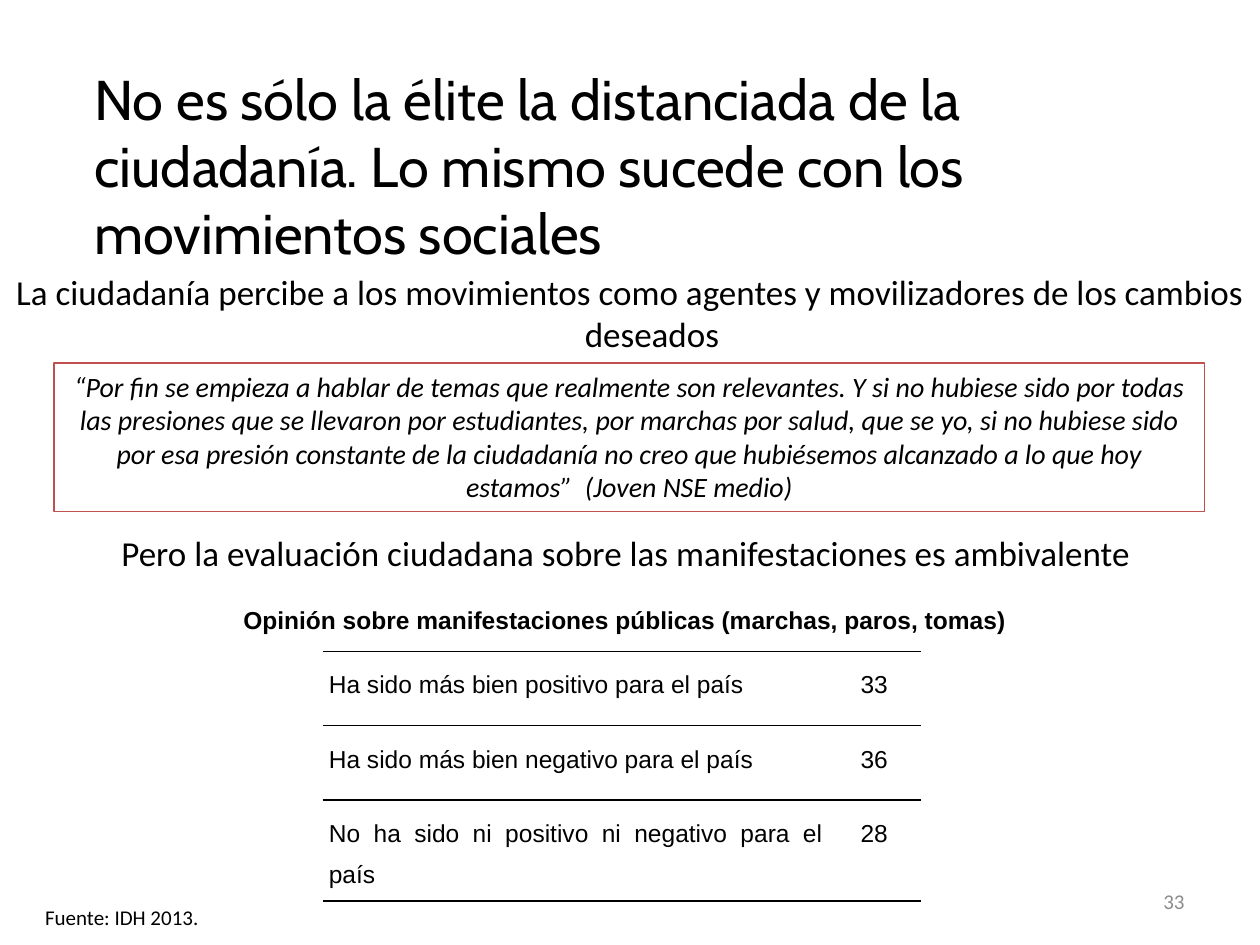
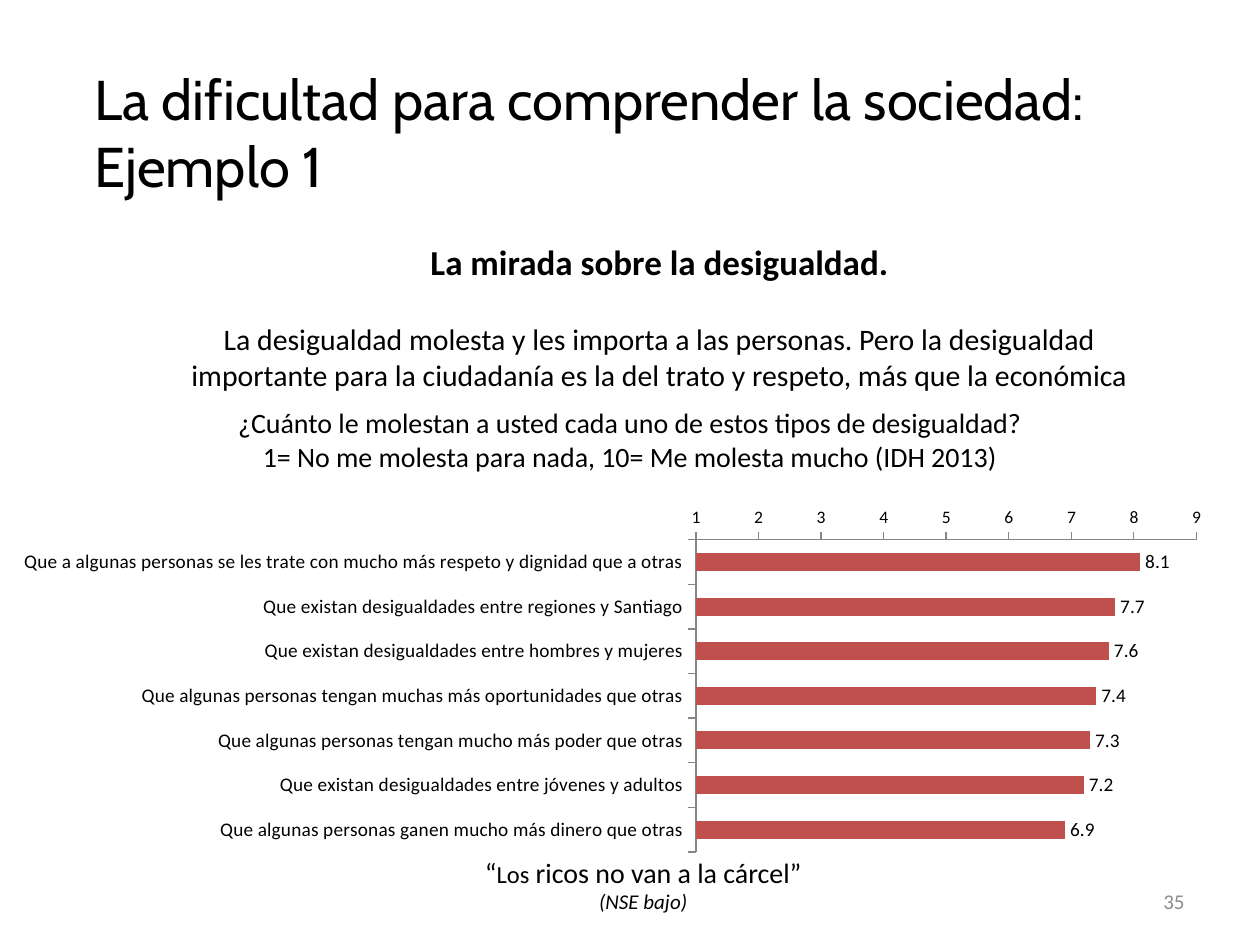
from lxml.etree import SubElement
from pptx import Presentation
from pptx.chart.data import CategoryChartData
from pptx.dml.color import RGBColor
from pptx.enum.chart import XL_CHART_TYPE as Kind, XL_LABEL_POSITION as Spot
from pptx.enum.chart import XL_TICK_MARK as Tick
from pptx.enum.shapes import MSO_SHAPE as Form
from pptx.enum.text import MSO_ANCHOR as Anchor, PP_ALIGN as Align
from pptx.oxml import parse_xml
from pptx.oxml.ns import nsdecls, qn
from pptx.util import Inches, Pt

# Shared look
HUES = {"ink": "000000", "red": "C0504D", "gray": "8C8C8C", "axis": "868686"}
BODY, HEAD, SANS = "Calibri", "Cabin", "Arial"

# Content: slide 1
TITLE_1 = ("No es sólo la élite la distanciada de la ciudadanía. "
           "Lo mismo sucede con los movimientos sociales")
CLAIMS = [
    "La ciudadanía percibe a los movimientos como agentes y movilizadores "
    "de los cambios deseados",
    "Pero la evaluación ciudadana sobre las manifestaciones es ambivalente ",
]
QUOTE = ("“Por fin se empieza a hablar de temas que realmente son relevantes. "
         "Y si no hubiese sido por todas las presiones que se llevaron por "
         "estudiantes, por marchas por salud, que se yo, si no hubiese sido por "
         "esa presión constante de la ciudadanía no creo que hubiésemos "
         "alcanzado a lo que hoy estamos”  (Joven NSE medio)")
CAPTION = "Opinión sobre manifestaciones públicas (marchas, paros, tomas)"
VIEWS = [
    ("Ha sido más bien positivo para el país", "33"),
    ("Ha sido más bien negativo para el país", "36"),
    ("No ha sido ni positivo ni negativo para el país", "28"),
]
SOURCE = "Fuente: IDH 2013."

# Content: slide 2
TITLE_2 = "La dificultad para comprender la sociedad: Ejemplo 1"
TOPIC = "La mirada sobre la desigualdad."
POINT = ("La desigualdad molesta y les importa a las personas. Pero la "
         "desigualdad importante para la ciudadanía es la del trato y respeto, "
         "más que la económica")
ASK = [
    "¿Cuánto le molestan a usted cada uno de estos tipos de desigualdad?",
    "1= No me molesta para nada, 10= Me molesta mucho (IDH 2013)",
]
SCORES = [
    ("Que a algunas personas se les trate con mucho más respeto y dignidad "
     "que a otras", 8.1),
    ("Que existan desigualdades entre regiones y Santiago", 7.7),
    ("Que existan desigualdades entre hombres y mujeres", 7.6),
    ("Que algunas personas tengan muchas más oportunidades que otras", 7.4),
    ("Que algunas personas tengan mucho más poder que otras", 7.3),
    ("Que existan desigualdades entre jóvenes y adultos", 7.2),
    ("Que algunas personas ganen mucho más dinero que otras", 6.9),
]
VOICE = [("“", 16), ("Los", 14), (" ricos no van a la cárcel”", 16)]
GROUP = "(NSE bajo)"


def tint(name):
    return RGBColor.from_string(HUES[name])


def style(font, size, face=BODY, hue="ink", bold=False, slant=False):
    font.size, font.name = Pt(size), face
    font.bold, font.italic = bold, slant
    font.color.rgb = tint(hue)


def add_run(para, text, size, **look):
    run = para.add_run()
    run.text = text
    style(run.font, size, **look)


def indent(para, left, first):
    props = para._p.get_or_add_pPr()
    props.set("marL", str(Inches(left)))
    props.set("indent", str(Inches(first)))


def fill_text(frame, paras, align=Align.CENTER, before=0, **look):
    """Each paragraph is a list of (text, size) runs."""
    for i, runs in enumerate(paras):
        para = frame.add_paragraph() if i else frame.paragraphs[0]
        para.alignment = align
        if i and before:
            para.space_before = Pt(before)
        for text, size in runs:
            add_run(para, text, size, **look)


def add_text(slide, spot, paras, wrap=True, **look):
    frame = slide.shapes.add_textbox(*map(Inches, spot)).text_frame
    frame.word_wrap = wrap
    fill_text(frame, paras, **look)
    return frame


def add_base(deck, title, number):
    """Blank slide with its title and page number."""
    slide = deck.slides.add_slide(deck.slide_layouts[6])
    add_text(slide, (0.65, 0.46, 8.92, 1), [[(title, 32)]],
             align=Align.LEFT, face=HEAD)
    foot = add_text(slide, (7.17, 6.95, 2.33, 0.4), [[(number, 12)]],
                    align=Align.RIGHT, hue="gray")
    foot.vertical_anchor = Anchor.MIDDLE
    return slide


def rule_cell(cell):
    """Black lines above and below, none at the sides."""
    cell.fill.background()
    props = cell._tc.get_or_add_tcPr()
    for i, side in enumerate("LRTB"):
        if side in "TB":
            paint = f'<a:solidFill><a:srgbClr val="{HUES["ink"]}"/></a:solidFill>'
        else:
            paint = "<a:noFill/>"
        props.insert(i, parse_xml(
            f'<a:ln{side} {nsdecls("a")} w="{Pt(1)}">{paint}</a:ln{side}>'))


def add_views(slide):
    table = slide.shapes.add_table(
        len(VIEWS), 2, *map(Inches, (2.56, 5.17, 4.75, 1.78))).table
    table.first_row = table.horz_banding = False
    for col, width in zip(table.columns, (4.02, 0.73)):
        col.width = Inches(width)
    for r, texts in enumerate(VIEWS):
        table.rows[r].height = Inches(0.59)
        for c, text in enumerate(texts):
            cell = table.cell(r, c)
            cell.margin_left = cell.margin_right = Inches(0.05)
            cell.margin_top = cell.margin_bottom = Inches(0.05)
            fill_text(cell.text_frame, [[(text, 14)]], align=Align.JUSTIFY, face=SANS)
            para = cell.text_frame.paragraphs[0]
            para.line_spacing = 1.5
            indent(para, 0, 0.2 * c)
            rule_cell(cell)


def place_plot(chart, **share):
    """Fix the inner plot area as shares of the chart."""
    area = chart._chartSpace.chart.plotArea
    old = area.find(qn("c:layout"))
    if old is not None:
        area.remove(old)
    layout = parse_xml(f'<c:layout {nsdecls("c")}/>')
    manual = SubElement(layout, qn("c:manualLayout"))
    marks = [("layoutTarget", "inner"), ("xMode", "edge"), ("yMode", "edge")]
    for tag, val in marks + list(share.items()):
        SubElement(manual, qn(f"c:{tag}")).set("val", str(val))
    area.insert(0, layout)


def add_scores(slide):
    data = CategoryChartData()
    data.categories = [name for name, _ in SCORES]
    data.add_series("Series 1", [score for _, score in SCORES])
    chart = slide.shapes.add_chart(
        Kind.BAR_CLUSTERED, *map(Inches, (0, 3.97, 9.69, 2.85)), data).chart
    chart.has_legend = chart.has_title = False
    style(chart.font, 10)
    place_plot(chart, x=0.57, y=0.11, w=0.41, h=0.87)

    # Axes
    names, scale = chart.category_axis, chart.value_axis
    for axis, size in ((names, 11), (scale, 10)):
        axis.has_major_gridlines = False
        axis.major_tick_mark, axis.minor_tick_mark = Tick.OUTSIDE, Tick.NONE
        axis.format.line.color.rgb = tint("axis")
        style(axis.tick_labels.font, size)
    names.reverse_order = True
    scale.minimum_scale, scale.maximum_scale, scale.major_unit = 1, 9, 1
    scale.tick_labels.number_format = "General"
    scale.tick_labels.number_format_is_linked = False

    # Bars and their values
    plot = chart.plots[0]
    plot.gap_width, plot.vary_by_categories = 150, False
    bars = plot.series[0]
    bars.format.fill.solid()
    bars.format.fill.fore_color.rgb = tint("red")
    labels = bars.data_labels
    labels.show_value, labels.position = True, Spot.OUTSIDE_END
    labels.number_format, labels.number_format_is_linked = "#,##0.0", False
    style(labels.font, 11)


def build_views(deck):
    slide = add_base(deck, TITLE_1, "33")
    claims = add_text(slide, (0, 2.1, 10, 5.35),
                      [[(text, 20)] for text in CLAIMS], before=101)
    for para in claims.paragraphs:
        indent(para, 0.35, -0.35)
    add_text(slide, (0.26, 7.13, 1.47, 0.3), [[(SOURCE, 12)]],
             wrap=False, align=Align.LEFT)
    add_text(slide, (1.14, 4.75, 7.64, 0.34), [[(CAPTION, 14)]],
             face=SANS, bold=True)
    add_views(slide)

    # Framed quote
    box = slide.shapes.add_shape(Form.RECTANGLE, *map(Inches, (0.43, 2.88, 9.13, 1.18)))
    box.shadow.inherit = False
    box.fill.background()
    box.line.color.rgb, box.line.width = tint("red"), Pt(1)
    box.text_frame.word_wrap = True
    box.text_frame.vertical_anchor = Anchor.TOP
    fill_text(box.text_frame, [[(QUOTE, 16)]], slant=True)


def build_scores(deck):
    slide = add_base(deck, TITLE_2, "35")
    intro = add_text(slide, (1.22, 1.86, 8.03, 1.31), [[(TOPIC, 20)]], bold=True)
    para = intro.add_paragraph()
    para.alignment, para.space_before = Align.CENTER, Pt(22)
    add_run(para, POINT, 17)
    add_text(slide, (0.67, 3.17, 8.66, 0.64), [[(text, 16)] for text in ASK])
    voice = add_text(slide, (1.01, 6.74, 8.19, 0.57), [VOICE])
    para = voice.add_paragraph()
    para.alignment = Align.CENTER
    add_run(para, GROUP, 12, slant=True)
    add_scores(slide)


def main():
    deck = Presentation()
    deck.slide_width, deck.slide_height = Inches(10), Inches(7.5)
    build_views(deck)
    build_scores(deck)
    deck.save("out.pptx")


if __name__ == "__main__":
    main()
